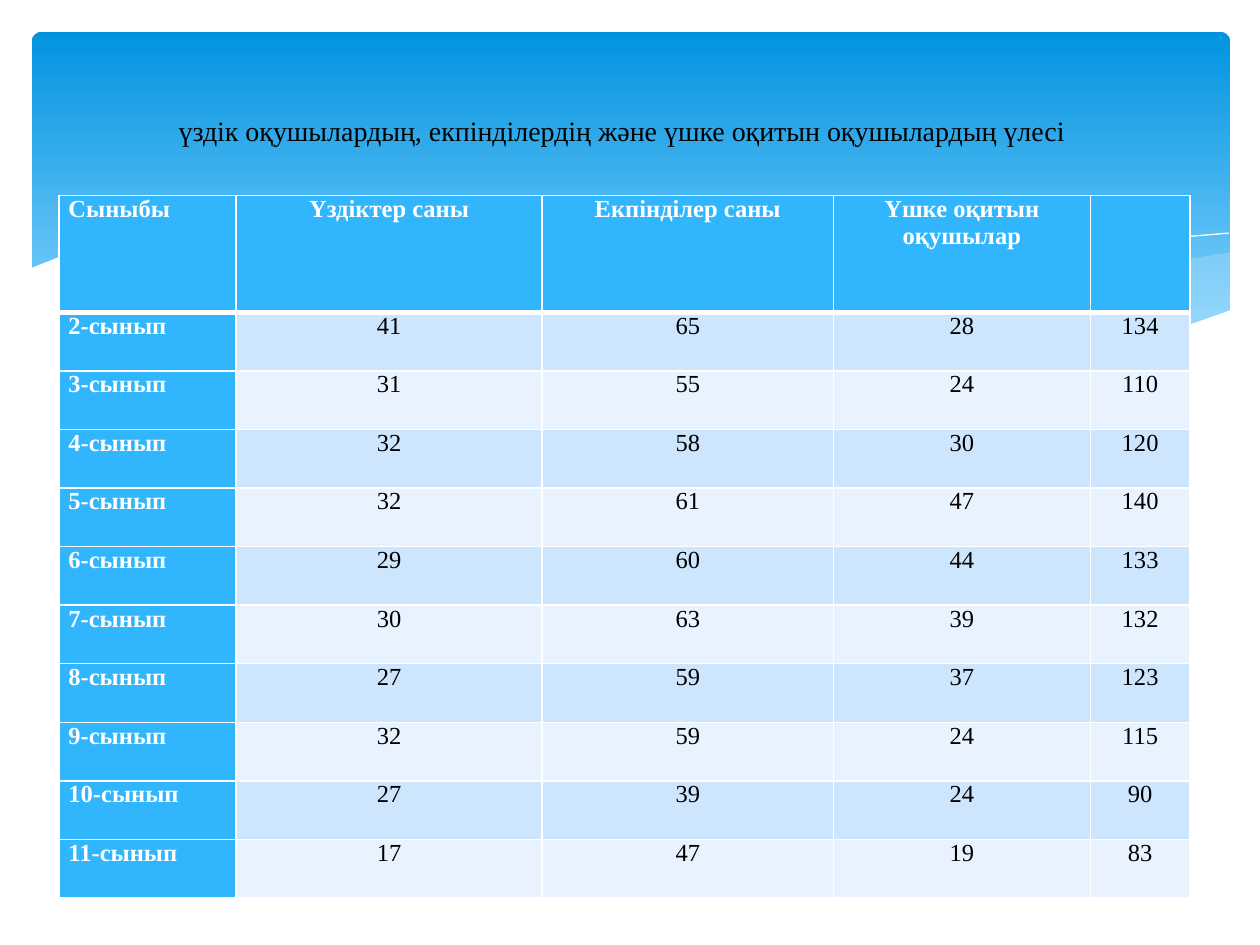
from dataclasses import dataclass
from lxml.etree import SubElement
from pptx import Presentation
from pptx.dml.color import RGBColor
from pptx.enum.shapes import MSO_SHAPE
from pptx.enum.text import MSO_ANCHOR, PP_ALIGN
from pptx.oxml.ns import qn
from pptx.util import Cm, Pt


@dataclass(frozen=True)
class Theme:
    font: str = "Times New Roman"
    title_size: int = 16
    table_size: int = 14
    white: str = "FFFFFF"
    black: str = "000000"
    sky_top: str = "0293E0"
    sky_bottom: str = "83D3FE"
    wave: str = "C6E7FC"
    accent: str = "31B6FD"
    bands: tuple = ("CEE5FE", "E8F3FF")


THEME = Theme()

TITLE = "үздік оқушылардың, екпінділердің және үшке оқитын оқушылардың үлесі"
HEADINGS = ["Сыныбы", "Үздіктер саны", "Екпінділер саны", "Үшке оқитын оқушылар", ""]
# Excellent, good and satisfactory pupils in grades 2 to 11
COUNTS = [
    (41, 65, 28), (31, 55, 24), (32, 58, 30), (32, 61, 47), (29, 60, 44),
    (30, 63, 39), (27, 59, 37), (32, 59, 24), (27, 39, 24), (17, 47, 19),
]
COLUMN_WIDTHS = [3.57, 6.17, 5.87, 5.18, 2.01]
HEADER_HEIGHT, ROW_HEIGHT = 2.36, 1.18

# Wave outlines in centimetres from the corner of the banner
RIGHT_WAVE = [
    (24.13, 4.45), (23.11, 4.62), (21.23, 5.03), (19.15, 5.51), (17.3, 5.89),
    (16.15, 6.1), (17.27, 6.25), (18.59, 6.38), (20.04, 6.43), (21.29, 6.35),
    (22.35, 6.2), (23.29, 5.94), (24.16, 5.64), (24.16, 4.45),
]
MIDDLE_WAVE = [
    (22.05, 6.3), (20.62, 6.1), (19.05, 5.82), (17.3, 5.46), (15.34, 5),
    (13.82, 4.65), (12.42, 4.39), (11.18, 4.22), (10.03, 4.11), (9.02, 4.06),
    (8.1, 4.09), (6.63, 4.22), (8.05, 4.42), (9.63, 4.72), (10.77, 5),
    (12.83, 5.46), (14.63, 5.84), (16.26, 6.12), (17.7, 6.32), (19, 6.4),
    (20.4, 6.43), (21.39, 6.38),
]
FALLING_LINE = [
    (7.21, 4.32), (8.1, 4.19), (9.55, 4.11), (10.8, 4.14), (12.32, 4.24),
    (14.15, 4.45), (15.52, 4.65), (17.02, 4.93), (18.67, 5.28), (20.47, 5.74),
    (22.4, 6.27),
]
RISING_LINE = [
    (14.94, 5.89), (16.43, 5.49), (18.36, 5.03), (20.6, 4.55), (22.1, 4.29),
    (23.19, 4.14), (24.13, 4.06),
]
FRONT_WAVE = [
    (24.18, 5.61), (23.24, 5.94), (22.2, 6.2), (20.96, 6.35), (19.91, 6.4),
    (18.26, 6.32), (16.33, 6.1), (14.68, 5.82), (12.8, 5.44), (10.72, 4.95),
    (8.64, 4.5), (6.78, 4.19), (5.21, 4.06), (3.86, 4.04), (2.72, 4.09),
    (1.78, 4.22), (0.86, 4.42), (-0.05, 4.78), (-0.05, 7.72), (24.18, 7.72),
]


def color(code):
    return RGBColor.from_string(code)


def write(frame, text, size, ink=THEME.black, bold=False, align=PP_ALIGN.CENTER):
    frame.word_wrap = True
    para = frame.paragraphs[0]
    para.alignment = align
    span = para.add_run()
    span.text = text
    span.font.name = THEME.font
    span.font.size = Pt(size)
    span.font.bold = bold
    span.font.color.rgb = color(ink)


def add_outline(page, left, top, points, fill=None, opacity=100):
    """Draw a filled wave, or an open white line when there is no fill."""
    corners = [(Cm(left + x), Cm(top + y)) for x, y in points]
    builder = page.shapes.build_freeform(*corners[0])
    builder.add_line_segments(corners[1:], close=fill is not None)
    shape = builder.convert_to_shape()
    shape.shadow.inherit = False
    if fill is None:
        shape.fill.background()
        shape.line.color.rgb = color(THEME.white)
        shape.line.width = Pt(0)
        return
    shape.line.fill.background()
    shape.fill.solid()
    shape.fill.fore_color.rgb = color(fill)
    if opacity < 100:
        tint = shape.fill._xPr.find(qn("a:solidFill"))[0]
        SubElement(tint, qn("a:alpha"), val=str(opacity * 1000))


def add_banner(page, left, top, width, height):
    panel = page.shapes.add_shape(
        MSO_SHAPE.ROUNDED_RECTANGLE, Cm(left), Cm(top), Cm(width), Cm(height))
    panel.adjustments[0] = 0.03
    panel.shadow.inherit = False
    panel.line.fill.background()
    panel.fill.gradient()
    panel.fill.gradient_angle = 270
    stops = [(0, THEME.sky_top), (0.9, THEME.sky_bottom)]
    for stop, (position, shade) in zip(panel.fill.gradient_stops, stops):
        stop.position = position
        stop.color.rgb = color(shade)

    # Waves from back to front
    add_outline(page, left, top, RIGHT_WAVE, THEME.wave, opacity=29)
    add_outline(page, left, top, MIDDLE_WAVE, THEME.wave, opacity=40)
    add_outline(page, left, top, FALLING_LINE)
    add_outline(page, left, top, RISING_LINE)
    add_outline(page, left, top, FRONT_WAVE, THEME.white)


def add_title(page, left, top, width, height):
    box = page.shapes.add_textbox(Cm(left), Cm(top), Cm(width), Cm(height))
    box.text_frame.vertical_anchor = MSO_ANCHOR.TOP
    box.text_frame.margin_top = Cm(0.16)
    write(box.text_frame, TITLE, THEME.title_size)


def set_borders(cell, top=1, bottom=1):
    properties = cell._tc.get_or_add_tcPr()
    for side, points in (("L", 1), ("R", 1), ("T", top), ("B", bottom)):
        line = SubElement(properties, qn(f"a:ln{side}"), w=str(Pt(points)))
        fill = SubElement(line, qn("a:solidFill"))
        SubElement(fill, qn("a:srgbClr"), val=THEME.white)


def add_results(page, left, top):
    rows = [HEADINGS]
    for grade, counts in enumerate(COUNTS, start=2):
        rows.append([f"{grade}-сынып", *counts, sum(counts)])
    heights = [HEADER_HEIGHT] + [ROW_HEIGHT] * len(COUNTS)
    table = page.shapes.add_table(
        len(rows), len(HEADINGS), Cm(left), Cm(top),
        Cm(sum(COLUMN_WIDTHS)), Cm(sum(heights))).table
    table.horz_banding = False
    for column, width in zip(table.columns, COLUMN_WIDTHS):
        column.width = Cm(width)

    for r, (values, height) in enumerate(zip(rows, heights)):
        table.rows[r].height = Cm(height)
        for c, value in enumerate(values):
            cell = table.cell(r, c)
            heading = r == 0 or c == 0
            set_borders(cell, top=3 if r == 1 else 1, bottom=3 if r == 0 else 1)
            cell.fill.solid()
            cell.fill.fore_color.rgb = color(
                THEME.accent if heading else THEME.bands[(r - 1) % 2])
            cell.margin_left = cell.margin_right = Cm(0.19)
            cell.margin_top = cell.margin_bottom = Cm(0)
            write(cell.text_frame, str(value), THEME.table_size, bold=heading,
                  ink=THEME.white if heading else THEME.black,
                  align=PP_ALIGN.LEFT if c == 0 else PP_ALIGN.CENTER)


def main():
    deck = Presentation()
    deck.slide_width, deck.slide_height = Cm(25.4), Cm(19.05)
    page = deck.slides.add_slide(deck.slide_layouts[6])
    add_banner(page, 0.64, 0.64, 24.16, 6.86)
    add_results(page, 1.19, 3.94)
    add_title(page, 0.64, 2.13, 23.8, 1.63)
    deck.save("out.pptx")


if __name__ == "__main__":
    main()
